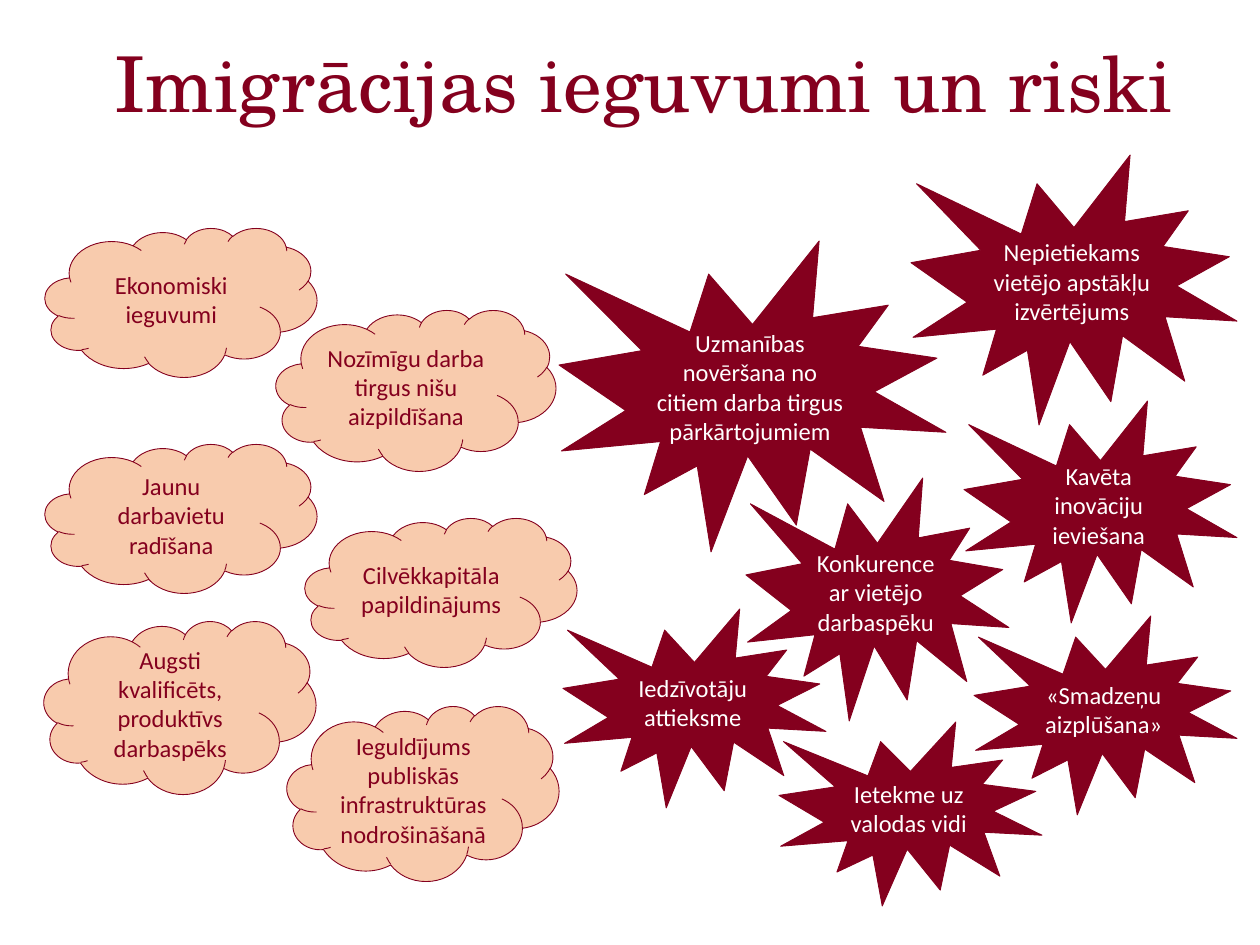
from pptx import Presentation
from pptx import util as u
from pptx.dml.color import RGBColor
from pptx.enum import shapes, text

PX = 914400 / 126
MAROON = RGBColor(0x84, 0x00, 0x1E)
PEACH = RGBColor(0xF8, 0xCB, 0xAD)
WHITE = RGBColor(0xFF, 0xFF, 0xFF)

BENEFITS = [
    ("Ekonomiski ieguvumi", 45, 228, 272, 149),
    ("Jaunu darbavietu radīšana", 45, 444, 272, 149),
    ("Nozīmīgu darba tirgus nišu aizpildīšana", 276, 310, 280, 161),
    ("Cilvēkkapitāla papildinājums", 305, 518, 272, 149),
    ("Ieguldījums publiskās infrastruktūras nodrošināšanā", 287, 706, 272, 175),
    ("Augsti kvalificēts, produktīvs darbaspēks", 44, 621, 272, 173),
]
RISKS = [
    ("Nepietiekams vietējo apstākļu izvērtējums", 911, 155, 326, 270),
    ("Uzmanības novēršana no citiem darba tirgus pārkārtojumiem", 559, 241, 387, 311),
    ("Kavēta inovāciju ieviešana", 964, 401, 273, 222),
    ("«Smadzeņu aizplūšana»", 974, 616, 263, 199),
    ("Konkurence ar vietējo darbaspēku", 746, 478, 263, 243),
    ("Ietekme uz valodas vidi", 779, 722, 263, 184),
    ("Iedzīvotāju attieksme", 563, 609, 263, 199),
]


def px(n):
    return u.Emu(round(n * PX))


def write(tf, words, font, size, color, align):
    tf.word_wrap = True
    tf.auto_size = text.MSO_AUTO_SIZE.NONE
    tf.vertical_anchor = text.MSO_ANCHOR.MIDDLE
    p = tf.paragraphs[0]
    p.alignment = align
    r = p.add_run()
    r.text = words
    r.font.name = font
    r.font.size = u.Pt(size)
    r.font.color.rgb = color
    return p


def add_title(s, words):
    sp = s.shapes.title
    sp.left, sp.top, sp.width, sp.height = map(px, (102, 3, 1134, 170))
    p = write(sp.text_frame, words, "TeX Gyre Schola", 44, MAROON, text.PP_ALIGN.LEFT)
    p.line_spacing = 0.9


def add_bubble(s, kind, fill, color, words, *box):
    sp = s.shapes.add_shape(kind, *map(px, box))
    sp.shadow.inherit = False
    sp.fill.solid()
    sp.fill.fore_color.rgb = fill
    sp.line.color.rgb = MAROON
    sp.line.width = u.Pt(0.5)
    write(sp.text_frame, words, "Calibri", 14, color, text.PP_ALIGN.CENTER)


def main():
    prs = Presentation()
    prs.slide_width, prs.slide_height = px(1260), px(945)
    s = prs.slides.add_slide(prs.slide_layouts[5])
    add_title(s, "Imigrācijas ieguvumi un riski")
    for benefit in BENEFITS:
        add_bubble(s, shapes.MSO_SHAPE.CLOUD, PEACH, MAROON, *benefit)
    for risk in RISKS:
        add_bubble(s, shapes.MSO_SHAPE.EXPLOSION1, MAROON, WHITE, *risk)
    prs.save("out.pptx")


if __name__ == "__main__":
    main()
